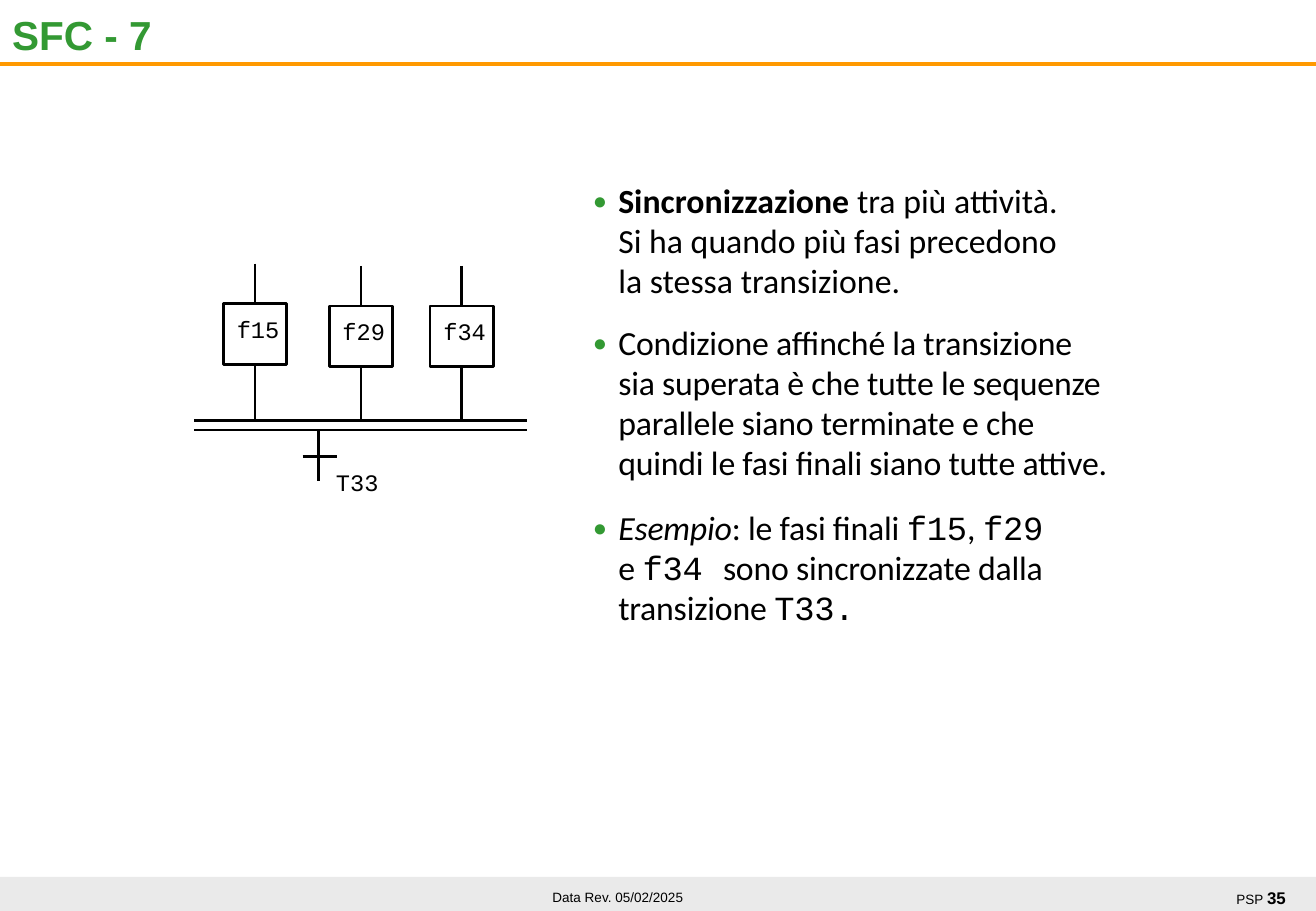
"""Build the SFC slide on synchronising several parallel activities."""
from dataclasses import dataclass

from lxml.etree import SubElement
from pptx import Presentation
from pptx.dml.color import RGBColor
from pptx.enum.shapes import MSO_CONNECTOR, MSO_SHAPE
from pptx.enum.text import MSO_ANCHOR, MSO_AUTO_SIZE, PP_ALIGN
from pptx.oxml.ns import qn
from pptx.slide import Slide
from pptx.text.text import Font, TextFrame
from pptx.util import Pt

BLACK, GREEN, ORANGE, GREY = "000000", "339933", "FF9900", "EAEAEA"
SANS, BODY, MONO = "Arial", "Calibri", "Courier New"
PAGE_WIDTH, PAGE_HEIGHT = 779.76, 540
STEP_WIDTH, STEP_HEIGHT, STUB = 37.44, 36, 23.76
BAR_LEFT, BAR_RIGHT, BAR_TOP, BAR_BOTTOM = 115.2, 312.48, 249.12, 254.88


@dataclass(frozen=True)
class Span:
    """A stretch of text with one look; a newline breaks the line."""
    text: str
    name: str | None = None
    size: float | None = None
    bold: bool | None = None
    italic: bool | None = None


@dataclass(frozen=True)
class Bullet:
    """A bulleted statement, its top and its letter spacing."""
    top: float
    height: float
    tracking: float
    spans: tuple[Span, ...]


@dataclass(frozen=True)
class Step:
    """A step of the chart, hung on its centre line."""
    name: str
    centre: float
    top: float


BULLETS = (
    Bullet(104.4, 79.2, 0, (
        Span("Sincronizzazione ", bold=True),
        Span("tra più attività.\nSi ha quando più fasi precedono\nla stessa transizione."))),
    Bullet(188.64, 101.52, -0.15, (
        Span("Condizione affinché la transizione\nsia superata è che tutte le sequenze\n"
             "parallele siano terminate e che\nquindi le fasi finali siano tutte attive."),)),
    Bullet(298.08, 101.52, -0.15, (
        Span("Esempio", italic=True), Span(": le fasi finali "), Span("f15", MONO),
        Span(", "), Span("f29", MONO), Span("\ne "), Span("f34 ", MONO),
        Span("sono sincronizzate dalla\ntransizione "), Span("T33.", MONO))),
)
STEPS = (Step("f15", 151.2, 180), Step("f29", 213.84, 181.44), Step("f34", 273.6, 181.44))


def colour(value: str) -> RGBColor:
    """Turn a hex string into a colour."""
    return RGBColor.from_string(value)


def style(font: Font, name: str, size: float, value: str = BLACK) -> None:
    """Set the face, size and colour of a font."""
    font.name, font.size = name, Pt(size)
    font.color.rgb = colour(value)


def add_line(page: Slide, x1: float, y1: float, x2: float, y2: float,
             value: str = BLACK, width: float = 1.5) -> None:
    """Draw a straight line without a shadow."""
    line = page.shapes.add_connector(MSO_CONNECTOR.STRAIGHT, Pt(x1), Pt(y1), Pt(x2), Pt(y2))
    line.line.color.rgb = colour(value)
    line.line.width = Pt(width)
    SubElement(line._element.spPr, qn("a:effectLst"))


def add_rectangle(page: Slide, left: float, top: float, width: float, height: float,
                  fill: str | None = None) -> None:
    """Draw a filled band, or an outlined box when no fill is given."""
    box = page.shapes.add_shape(MSO_SHAPE.RECTANGLE, Pt(left), Pt(top), Pt(width), Pt(height))
    box.shadow.inherit = False
    if fill:
        box.fill.solid()
        box.fill.fore_color.rgb = colour(fill)
        box.line.fill.background()
    else:
        box.fill.background()
        box.line.color.rgb = colour(BLACK)
        box.line.width = Pt(1.5)


def add_frame(page: Slide, left: float, top: float, width: float, height: float,
              wrap: bool = False) -> TextFrame:
    """Add a text box and return its frame."""
    frame = page.shapes.add_textbox(Pt(left), Pt(top), Pt(width), Pt(height)).text_frame
    frame.word_wrap = wrap
    return frame


def add_label(page: Slide, left: float, top: float, width: float, height: float,
              spans: tuple[Span, ...], name: str, size: float,
              align: PP_ALIGN = PP_ALIGN.LEFT) -> None:
    """Write a single-line label."""
    para = add_frame(page, left, top, width, height).paragraphs[0]
    para.alignment = align
    style(para.font, name, size)
    for part in spans:
        span = para.add_run()
        span.text, span.font.bold = part.text, part.bold
        if part.size:
            span.font.size = Pt(part.size)


def add_bullet(page: Slide, bullet: Bullet) -> None:
    """Write one bulleted statement."""
    frame = add_frame(page, 347.76, bullet.top, 326, bullet.height, wrap=True)
    frame.margin_left = frame.margin_right = frame.margin_top = frame.margin_bottom = Pt(3.6)
    para = frame.paragraphs[0]
    properties = para._p.get_or_add_pPr()
    properties.set("marL", str(Pt(15)))
    properties.set("indent", str(Pt(-15)))
    SubElement(SubElement(properties, qn("a:buClr")), qn("a:srgbClr"), val=GREEN)
    SubElement(properties, qn("a:buSzPct"), val="70000")
    SubElement(properties, qn("a:buFont"), typeface=SANS)
    SubElement(properties, qn("a:buChar"), char="●")
    para.line_spacing = 0.98
    style(para.font, BODY, 20)
    for part in bullet.spans:
        for index, piece in enumerate(part.text.split("\n")):
            if index:
                para.add_line_break()
            if piece:
                span = para.add_run()
                span.text = piece
                span.font.name = part.name
                span.font.bold, span.font.italic = part.bold, part.italic
                span._r.get_or_add_rPr().set("spc", str(round(bullet.tracking * 100)))


def add_step(page: Slide, step: Step) -> None:
    """Draw a step with its links and name."""
    left, bottom = step.centre - STEP_WIDTH / 2, step.top + STEP_HEIGHT
    add_line(page, step.centre, step.top - STUB, step.centre, step.top)
    add_rectangle(page, left, step.top, STEP_WIDTH, STEP_HEIGHT)
    add_label(page, left + 0.72, step.top + 2.88, 39.6, 24.48, (Span(step.name),), MONO, 14)
    add_line(page, step.centre, bottom, step.centre, BAR_TOP)


def add_title(page: Slide, text: str) -> None:
    """Place and format the title placeholder."""
    title = page.shapes.title
    title.left, title.top, title.width, title.height = Pt(0), Pt(5.76), Pt(684), Pt(32.4)
    frame = title.text_frame
    frame.text = text
    frame.auto_size = MSO_AUTO_SIZE.NONE
    frame.vertical_anchor = MSO_ANCHOR.BOTTOM
    para = frame.paragraphs[0]
    para.alignment = PP_ALIGN.LEFT
    style(para.font, SANS, 24, GREEN)
    para.font.bold = True


def main() -> None:
    """Assemble and save the deck."""
    deck = Presentation()
    deck.slide_width, deck.slide_height = Pt(PAGE_WIDTH), Pt(PAGE_HEIGHT)
    page = deck.slides.add_slide(deck.slide_layouts[5])
    add_line(page, 0, 38.16, PAGE_WIDTH, 38.16, ORANGE, 2.25)
    add_rectangle(page, 0, 519.84, PAGE_WIDTH, 20.16, GREY)
    add_label(page, 318.24, 523.44, 95.76, 17.28, (Span("Data Rev. 05/02/2025"),),
              SANS, 8, PP_ALIGN.CENTER)
    add_label(page, 721.44, 522.72, 47.52, 19.44,
              (Span("PSP "), Span("35", size=10, bold=True)), SANS, 8, PP_ALIGN.RIGHT)
    add_title(page, "SFC - 7")
    for bullet in BULLETS:
        add_bullet(page, bullet)
    for height in (BAR_TOP, BAR_BOTTOM):
        add_line(page, BAR_LEFT, height, BAR_RIGHT, height)
    for step in STEPS:
        add_step(page, step)
    add_line(page, 188.64, BAR_BOTTOM, 188.64, 285.12)
    add_line(page, 179.28, 270.72, 199.44, 270.72)
    add_label(page, 192, 274, 39.6, 24.48, (Span("T33"),), MONO, 14)
    deck.save("out.pptx")


if __name__ == "__main__":
    main()
